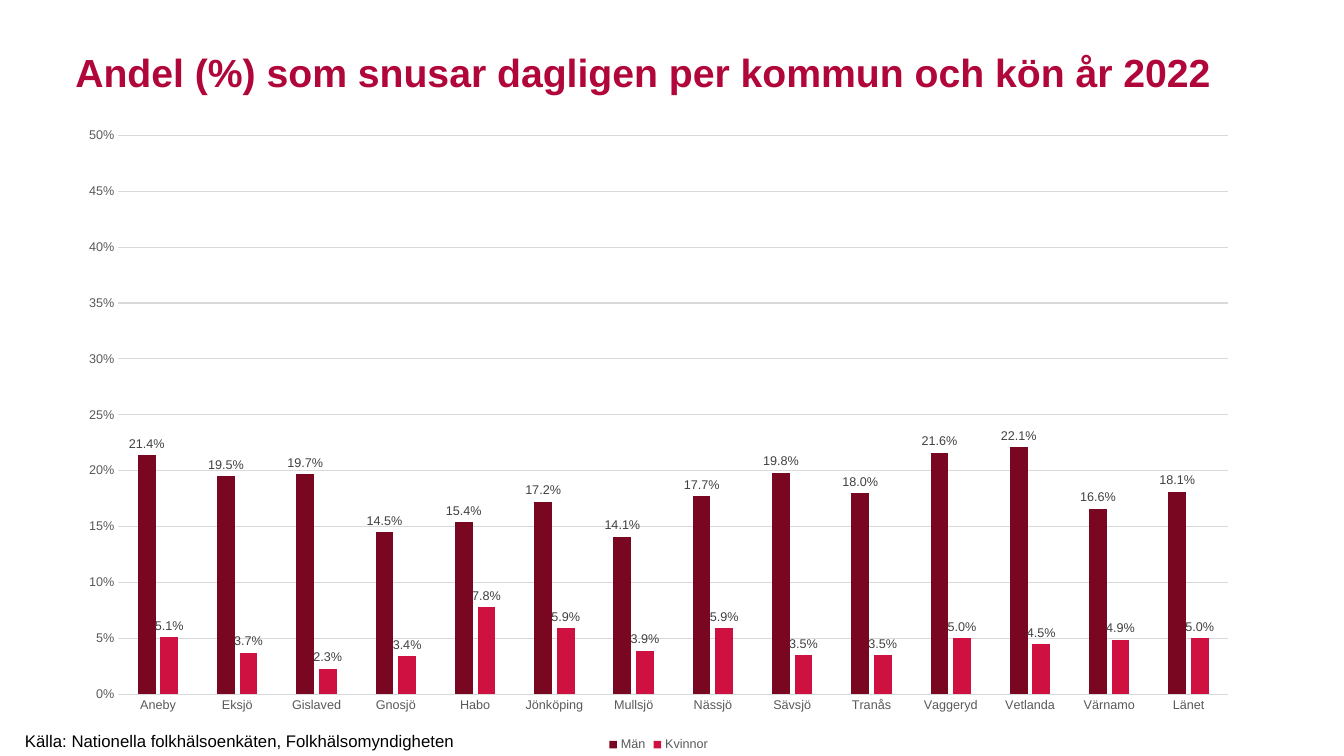
import pptx
import pptx.chart.data
import pptx.dml.color
import pptx.enum.chart
import pptx.enum.text
import pptx.util
from pptx.util import Cm

FONT = "Arial"
GREY = "595959"
GRID = "D9D9D9"
MUNICIPALITIES = [
    "Aneby", "Eksjö", "Gislaved", "Gnosjö", "Habo", "Jönköping", "Mullsjö",
    "Nässjö", "Sävsjö", "Tranås", "Vaggeryd", "Vetlanda", "Värnamo", "Länet",
]
# Series name, bar colour, daily snus users in percent
SERIES = [
    ("Män", "790721",
     [21.4, 19.5, 19.7, 14.5, 15.4, 17.2, 14.1,
      17.7, 19.8, 18.0, 21.6, 22.1, 16.6, 18.1]),
    ("Kvinnor", "CE1141",
     [5.1, 3.7, 2.3, 3.4, 7.8, 5.9, 3.9,
      5.9, 3.5, 3.5, 5.0, 4.5, 4.9, 5.0]),
]


def rgb(color):
    return pptx.dml.color.RGBColor.from_string(color)


def set_font(font, size, color, bold=False):
    font.name = FONT
    font.size = pptx.util.Pt(size)
    font.bold = bold
    font.color.rgb = rgb(color)


def set_line(line, color):
    line.color.rgb = rgb(color)
    line.width = pptx.util.Pt(0.75)


def add_text(slide, text, left, top, width, height, *, size, color,
             bold=False, space_after=0):
    tf = slide.shapes.add_textbox(left, top, width, height).text_frame
    tf.word_wrap = False
    tf.auto_size = pptx.enum.text.MSO_AUTO_SIZE.SHAPE_TO_FIT_TEXT
    p = tf.paragraphs[0]
    p.space_after = pptx.util.Pt(space_after)
    r = p.add_run()
    r.text = text
    set_font(r.font, size, color, bold)


def format_axes(chart):
    for axis in (chart.category_axis, chart.value_axis):
        axis.major_tick_mark = pptx.enum.chart.XL_TICK_MARK.NONE
        axis.minor_tick_mark = pptx.enum.chart.XL_TICK_MARK.NONE
        set_font(axis.tick_labels.font, 9, GREY)
    set_line(chart.category_axis.format.line, GRID)

    values = chart.value_axis
    values.minimum_scale = 0
    values.maximum_scale = 0.5
    values.major_unit = 0.05
    values.tick_labels.number_format = "0%"
    values.tick_labels.number_format_is_linked = False
    values.format.line.fill.background()
    set_line(values.major_gridlines.format.line, GRID)


def format_series(series, color):
    series.format.fill.solid()
    series.format.fill.fore_color.rgb = rgb(color)
    series.invert_if_negative = False
    labels = series.data_labels
    labels.show_value = True
    labels.number_format = "0.0%"
    labels.number_format_is_linked = False
    labels.position = pptx.enum.chart.XL_LABEL_POSITION.OUTSIDE_END
    set_font(labels.font, 9, "404040")


def add_column_chart(slide, left, top, width, height):
    data = pptx.chart.data.CategoryChartData(number_format="0.0%")
    data.categories = MUNICIPALITIES
    for name, _, percentages in SERIES:
        data.add_series(name, [round(v / 100, 3) for v in percentages])
    chart = slide.shapes.add_chart(
        pptx.enum.chart.XL_CHART_TYPE.COLUMN_CLUSTERED,
        left, top, width, height, data).chart
    set_font(chart.font, 10, "000000")
    chart.has_title = False
    chart.has_legend = True
    chart.legend.position = pptx.enum.chart.XL_LEGEND_POSITION.BOTTOM
    chart.legend.include_in_layout = False
    set_font(chart.legend.font, 9, GREY)

    plot = chart.plots[0]
    plot.gap_width = 219
    plot.overlap = -27
    plot.vary_by_categories = False
    for series, (_, color, _) in zip(plot.series, SERIES):
        format_series(series, color)
    format_axes(chart)


def main():
    prs = pptx.Presentation()
    prs.slide_width = Cm(33.87)
    prs.slide_height = Cm(19.05)
    slide = prs.slides.add_slide(prs.slide_layouts[6])

    add_column_chart(slide, Cm(1.65), Cm(2.9), Cm(29.9), Cm(16.15))
    add_text(slide, "Andel (%) som snusar dagligen per kommun och kön år 2022",
             Cm(1.65), Cm(1.09), Cm(29.46), Cm(1.45),
             size=28, color="B1063A", bold=True, space_after=18)
    add_text(slide, "Källa: Nationella folkhälsoenkäten, Folkhälsomyndigheten",
             Cm(0.38), Cm(18.29), Cm(11.4), Cm(0.76),
             size=12, color="000000")
    prs.save("out.pptx")


if __name__ == "__main__":
    main()
